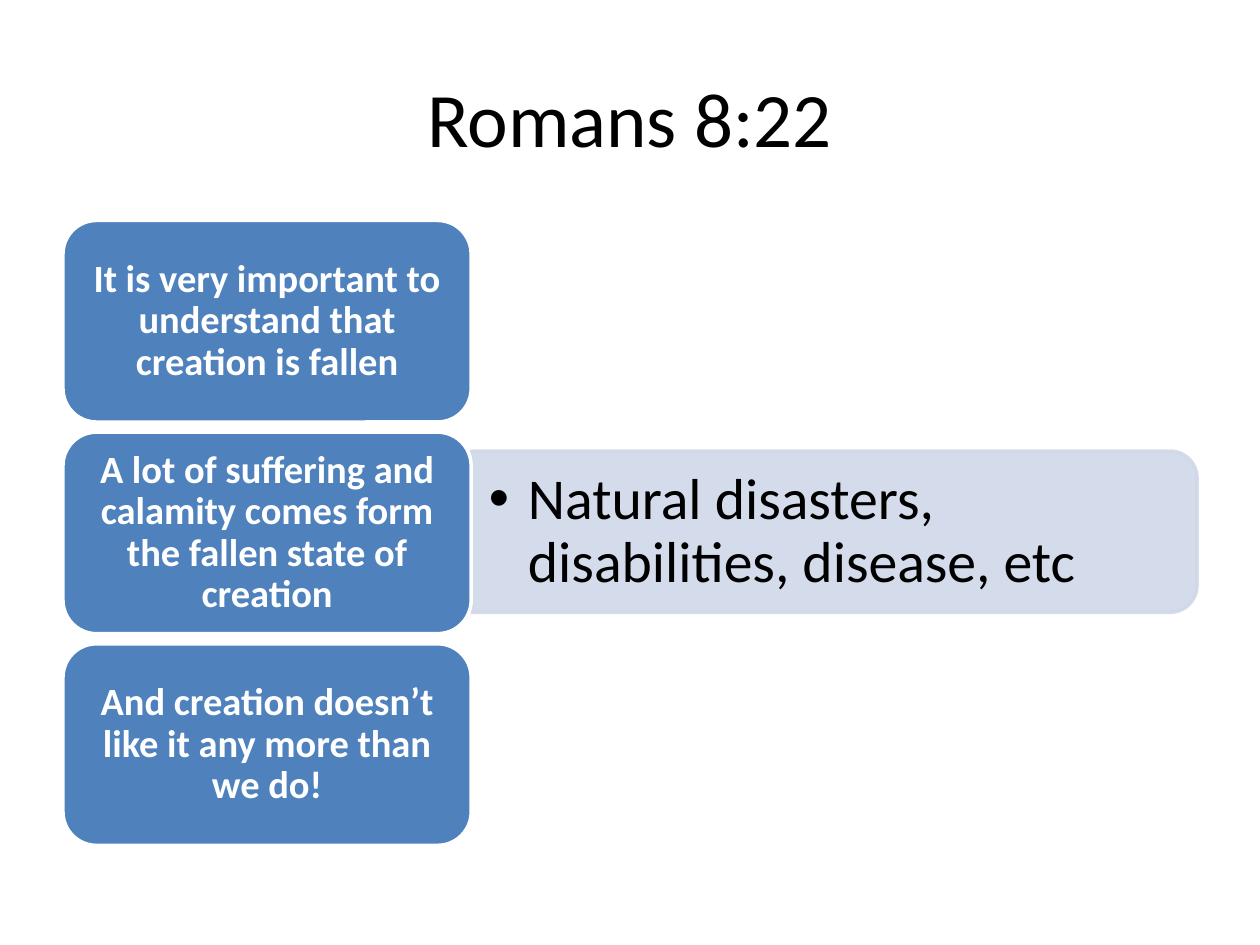
from lxml import etree
from pptx import Presentation
from pptx.dml.color import RGBColor
from pptx.enum.shapes import MSO_SHAPE as Shape
from pptx.enum.text import MSO_ANCHOR as Anchor, PP_ALIGN as Align
from pptx.oxml.ns import qn
from pptx.util import Inches, Pt

COLORS = {"blue": "4F81BD", "pale": "D0D8E8", "white": "FFFFFF", "black": "000000"}


class SlideBuilder:
    """Holds the style and the current slide."""

    font = "Calibri"
    line_width = Pt(2)

    def __init__(self, slide):
        self.slide = slide

    def color(self, name):
        return RGBColor.from_string(COLORS[name])

    def shape(self, kind, left, top, width, height, fill, line):
        shape = self.slide.shapes.add_shape(
            kind, Inches(left), Inches(top), Inches(width), Inches(height))
        shape.shadow.inherit = False
        shape.fill.solid()
        shape.fill.fore_color.rgb = self.color(fill)
        shape.line.color.rgb = self.color(line)
        shape.line.width = self.line_width
        return shape

    def add_text(self, shape, text, size, color="black", bold=False,
                 align=Align.CENTER, spacing=None, insets=(0.1, 0.05)):
        frame = shape.text_frame
        frame.word_wrap = True
        frame.vertical_anchor = Anchor.MIDDLE
        frame.margin_left = frame.margin_right = Inches(insets[0])
        frame.margin_top = frame.margin_bottom = Inches(insets[1])
        para = frame.paragraphs[0]
        para.alignment = align
        para.line_spacing = spacing
        span = para.add_run()
        span.text = text
        span.font.name = self.font
        span.font.size = Pt(size)
        span.font.bold = bold
        span.font.color.rgb = self.color(color)
        return para

    def text_box(self, left, top, width, height, text, size, **style):
        box = self.slide.shapes.add_textbox(
            Inches(left), Inches(top), Inches(width), Inches(height))
        return self.add_text(box, text, size, **style)

    def point_box(self, left, top, width, height, text):
        box = self.shape(Shape.ROUNDED_RECTANGLE, left, top, width, height, "blue", "white")
        self.add_text(box, text, 22, "white", bold=True, spacing=0.9, insets=(0.09, 0.05))

    def detail_bar(self, left, top, width, height):
        # Rounded top corners turn to the right; size is given before the turn
        bar = self.shape(Shape.ROUND_2_SAME_RECTANGLE, left + (width - height) / 2,
                         top + (height - width) / 2, height, width, "pale", "pale")
        bar.rotation = 90
        for tint in bar._element.spPr.iter(qn("a:srgbClr")):
            etree.SubElement(tint, qn("a:alpha"), val="90000")

    def bullet(self, para, indent):
        properties = para._p.get_or_add_pPr()
        properties.set("marL", str(Inches(indent)))
        properties.set("indent", str(-Inches(indent)))
        etree.SubElement(properties, qn("a:buFont"), typeface="Arial")
        etree.SubElement(properties, qn("a:buChar"), char="•")


def main():
    deck = Presentation()
    deck.slide_width, deck.slide_height = Inches(10), Inches(7.5)
    page = SlideBuilder(deck.slides.add_slide(deck.slide_layouts[6]))

    # Title
    page.text_box(0.5, 0.3, 9, 1.25, "Romans 8:22", 44)

    # Detail beside the second point
    page.detail_bar(3.74, 3.58, 5.76, 1.28)
    detail = page.text_box(3.74, 3.65, 5.7, 1.15,
                           "Natural disasters, disabilities, disease, etc", 33,
                           align=Align.LEFT, spacing=0.9, insets=(0.14, 0.07))
    page.bullet(detail, 0.31)

    # Column of points
    points = [
        "It is very important to understand that creation is fallen",
        "A lot of suffering and calamity comes form the fallen state of creation",
        "And creation doesn’t like it any more than we do!",
    ]
    height, pitch = 1.6, 1.68
    for row, text in enumerate(points):
        page.point_box(0.5, 1.75 + row * pitch, 3.24, height, text)

    deck.save("out.pptx")


if __name__ == "__main__":
    main()
